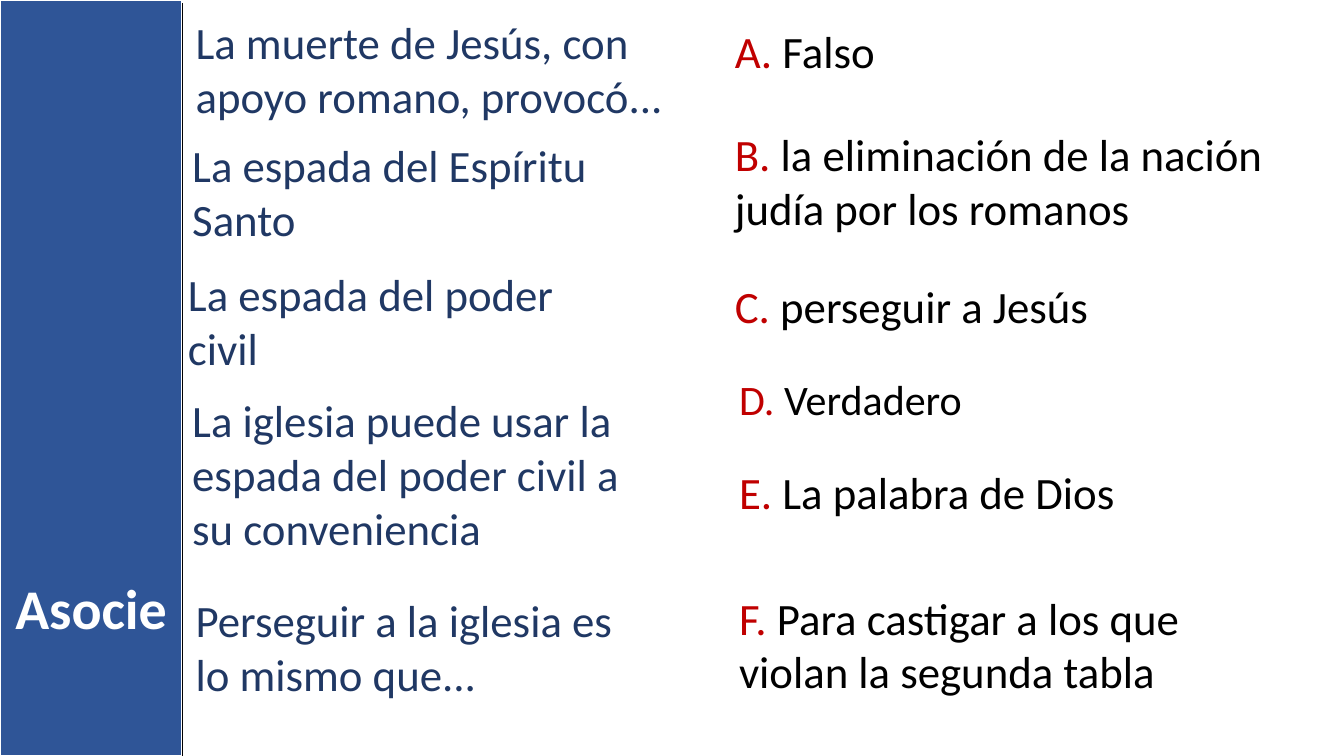
import dataclasses

import pptx
import pptx.dml.color
import pptx.enum.shapes
import pptx.enum.text
import pptx.oxml
import pptx.oxml.ns
import pptx.util


@dataclasses.dataclass(frozen=True)
class Theme:
    font: str = "Calibri"
    band: str = "2F5597"
    prompt: str = "203864"
    letter: str = "C00000"
    ink: str = "000000"
    white: str = "FFFFFF"
    body: int = 32
    small: int = 30
    head: int = 40


COLS, ROWS = 16, 9
BAND = 2.17  # columns taken by the side band

# left, top, width, lines, text
PROMPTS = [
    (2.21, 0.12, 6.2, 2, "La muerte de Jesús, con apoyo romano, provocó..."),
    (2.17, 1.58, 6.19, 2, "La espada del Espíritu Santo"),
    (2.12, 3.12, 5.35, 2, "La espada del poder civil"),
    (2.17, 4.62, 5.93, 3, "La iglesia puede usar la espada del poder civil a su conveniencia"),
    (2.21, 7, 5.69, 2, "Perseguir a la iglesia es lo mismo que..."),
]
ANSWERS = [
    (8.63, 0.22, 7.15, 1, "Falso"),
    (8.63, 1.45, 7.15, 2, "la eliminación de la nación judía por los romanos"),
    (8.63, 3.26, 6.72, 1, "perseguir a Jesús"),
    (8.68, 4.39, 6.28, 1, "Verdadero"),
    (8.68, 5.47, 6.8, 1, "La palabra de Dios"),
    (8.68, 6.97, 6.8, 2, "Para castigar a los que violan la segunda tabla"),
]


def color(code):
    return pptx.dml.color.RGBColor.from_string(code)


def write(para, text, *, font, size, ink, bold=False):
    run = para.add_run()
    run.text = text
    run.font.name = font
    run.font.size = pptx.util.Pt(size)
    run.font.bold = bold
    run.font.color.rgb = color(ink)


class Page:
    def __init__(self, deck, theme):
        self.theme = theme
        self.slide = deck.slides.add_slide(deck.slide_layouts[5])
        self.col = deck.slide_width / COLS
        self.row = deck.slide_height / ROWS

    def place(self, left, top, width, height):
        """Turn grid columns and rows into slide lengths."""
        return (round(left * self.col), round(top * self.row),
                round(width * self.col), round(height * self.row))

    def band(self, *cell):
        kind = pptx.enum.shapes.MSO_SHAPE.RECTANGLE
        box = self.slide.shapes.add_shape(kind, *self.place(*cell))
        box.shadow.inherit = False
        box.fill.solid()
        box.fill.fore_color.rgb = color(self.theme.band)
        box.line.color.rgb = color(self.theme.white)
        box.line.width = pptx.util.Pt(1.5)

    def text(self, left, top, width, lines, *parts, size):
        """Add a box tall enough for its lines; parts are (text, ink) pairs."""
        cell = self.place(left, top, width, 0.12 + 0.65 * lines)
        frame = self.slide.shapes.add_textbox(*cell).text_frame
        frame.word_wrap = True
        for words, ink in parts:
            write(frame.paragraphs[0], words, font=self.theme.font, size=size, ink=ink)

    def title(self, words, *cell):
        head = self.slide.shapes.title
        head.left, head.top, head.width, head.height = self.place(*cell)
        frame = head.text_frame
        frame.word_wrap = True
        frame.auto_size = pptx.enum.text.MSO_AUTO_SIZE.NONE
        frame.vertical_anchor = pptx.enum.text.MSO_ANCHOR.TOP
        para = frame.paragraphs[0]
        para.alignment = pptx.enum.text.PP_ALIGN.CENTER
        write(para, words, font=self.theme.font, size=self.theme.head,
              ink=self.theme.white, bold=True)
        # Bring the title in front of the band
        head.element.getparent().append(head.element)

    def rule(self, left, top, end):
        x, y, _, height = self.place(left, top, 0, end - top)
        kind = pptx.enum.shapes.MSO_CONNECTOR.STRAIGHT
        line = self.slide.shapes.add_connector(kind, x, y, x, y + height)
        line.line.color.rgb = color(self.theme.ink)
        line.line.width = pptx.util.Pt(1)
        props = line.element.spPr
        props.append(pptx.oxml.parse_xml(
            "<a:effectLst %s/>" % pptx.oxml.ns.nsdecls("a")))


def main():
    deck = pptx.Presentation()
    deck.slide_width = pptx.util.Inches(13.33)
    deck.slide_height = pptx.util.Inches(7.5)
    theme = Theme()
    page = Page(deck, theme)

    page.band(0, 0, BAND, ROWS)
    for *cell, words in PROMPTS:
        page.text(*cell, (words, theme.prompt), size=theme.body)
    for mark, (*cell, words) in zip("ABCDEF", ANSWERS):
        size = theme.small if mark == "D" else theme.body
        page.text(*cell, (f"{mark}. ", theme.letter), (words, theme.ink), size=size)
    page.title("Asocie", 0, 6.77, BAND, 0.92)
    page.rule(BAND, 0.04, ROWS)

    deck.save("out.pptx")


if __name__ == "__main__":
    main()
